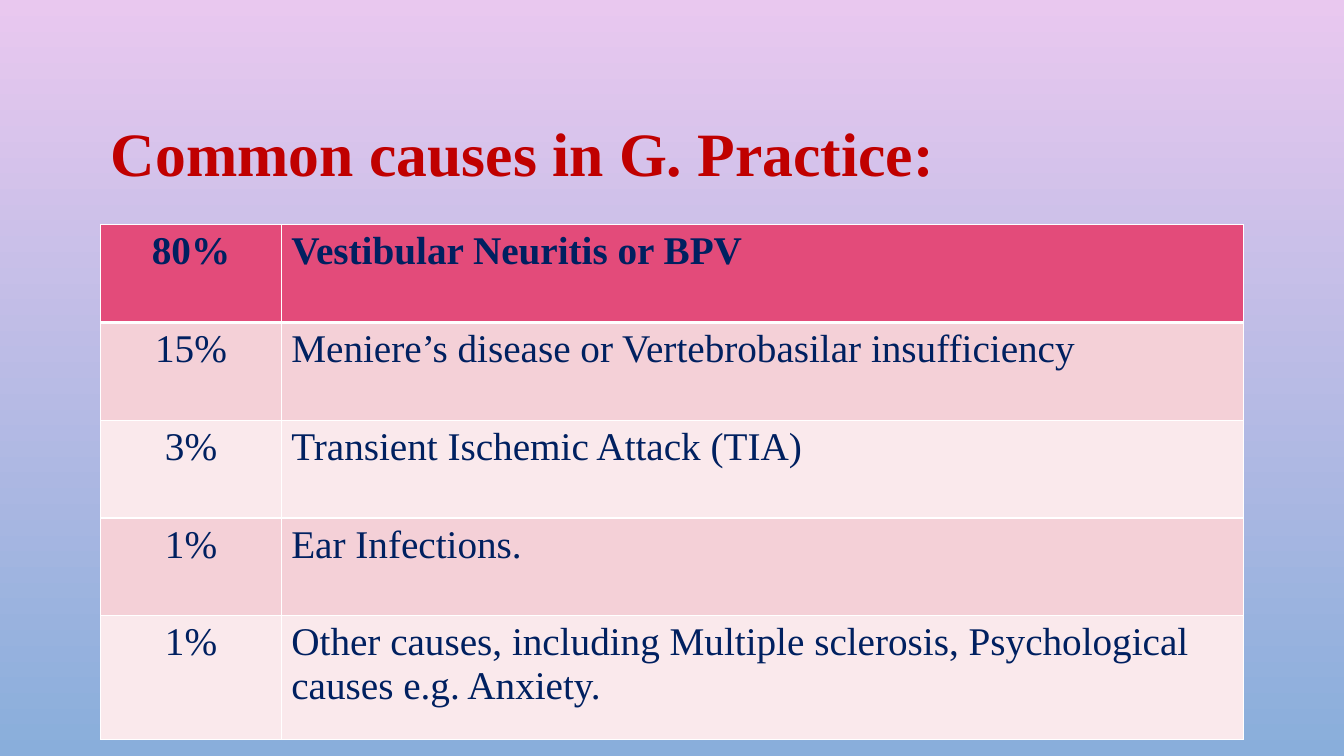
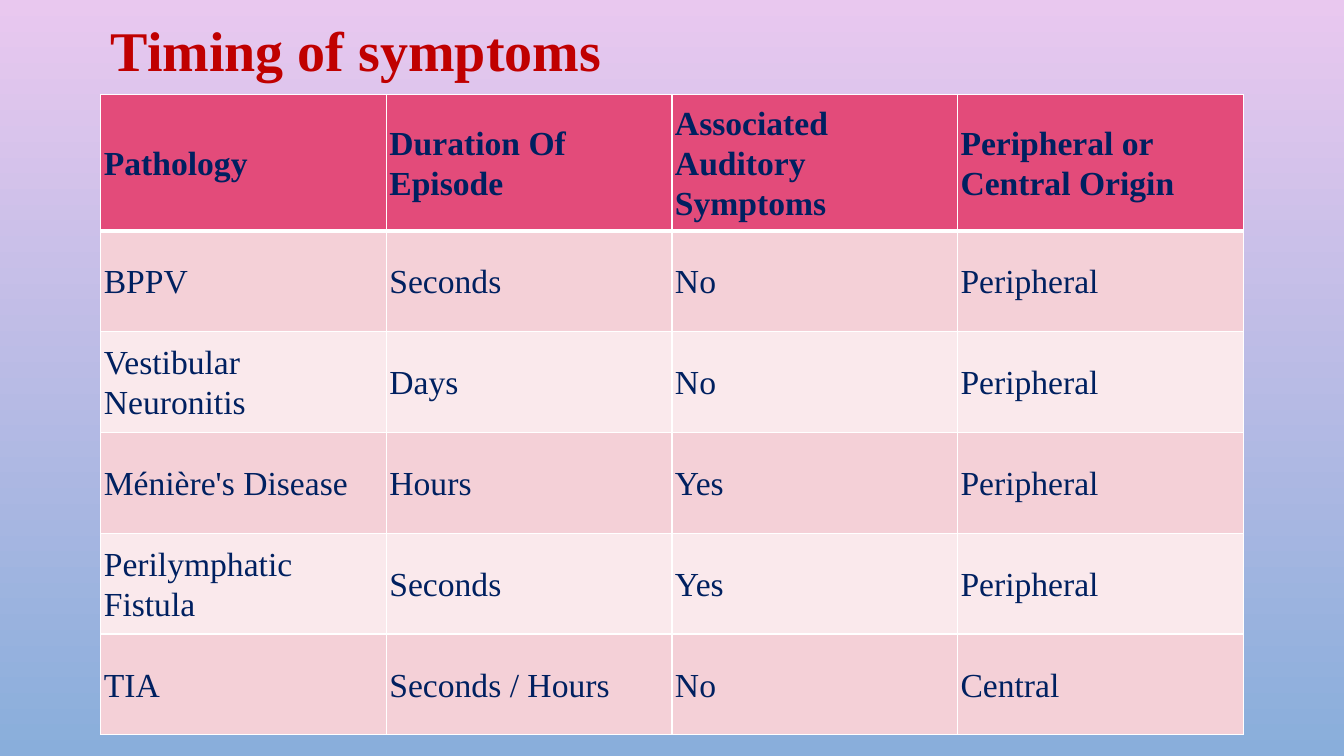
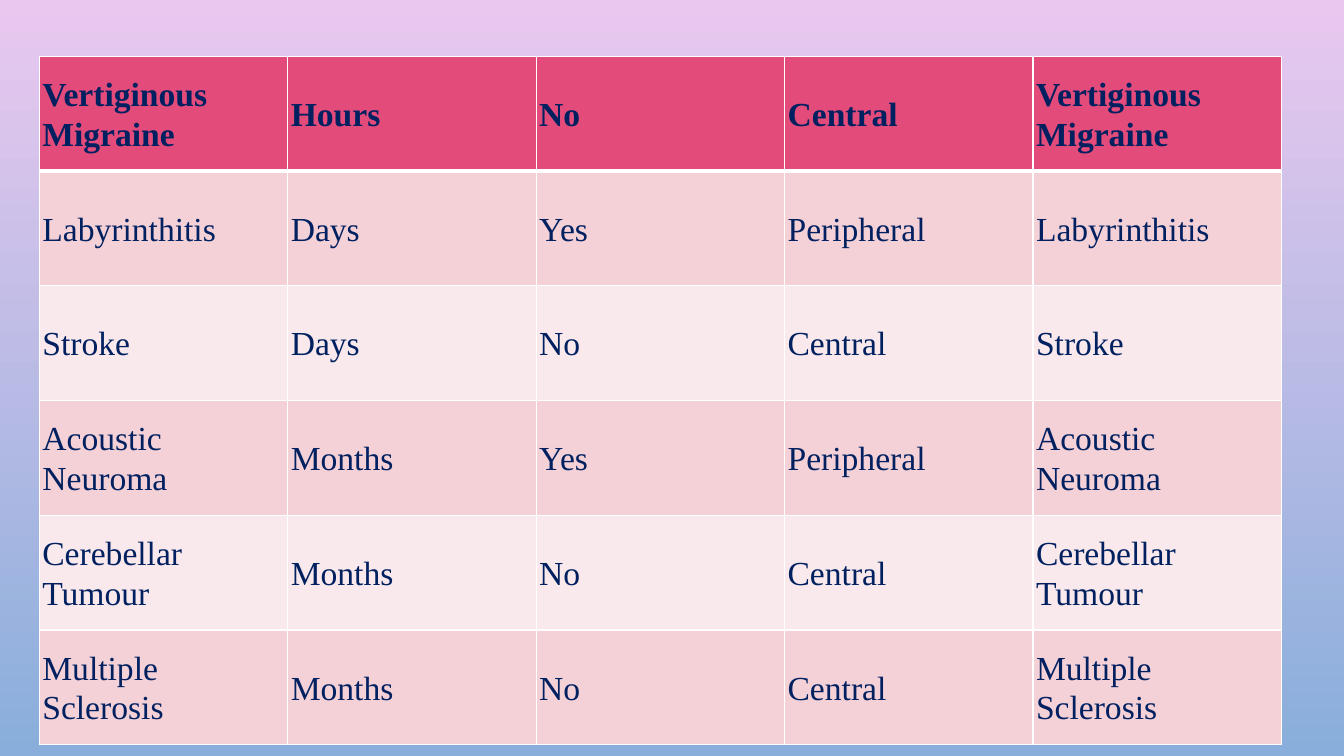
import pptx
import pptx.util
import pptx.dml.color
import pptx.enum.text
import pptx.oxml
import pptx.oxml.ns
from lxml import etree

Inches, Pt = pptx.util.Inches, pptx.util.Pt
ALIGN = pptx.enum.text.PP_ALIGN
ANCHOR = pptx.enum.text.MSO_ANCHOR

# Shared style
COLORS = {"sky_top": "E9C8EF", "sky_bottom": "89AEDB", "title": "C00000",
          "text": "002060", "header": "E34B7A", "odd": "F4D0D7",
          "even": "FAE9EC", "border": "FFFFFF"}
FONT = "Times New Roman"
TITLE_ONLY, BLANK = 5, 6
ROOMY = {"size": 28, "anchor": ANCHOR.TOP, "spacing": 1.0,
         "margins": (0.1, 0.05), "aligns": {0: ALIGN.CENTER}}
COMPACT = {"size": 24, "anchor": ANCHOR.MIDDLE, "spacing": 1.07,
           "margins": (0.03, 0.03), "aligns": {}}

# Content
CAUSES = [
    ("80%", "Vestibular Neuritis or BPV"),
    ("15%", "Meniere’s disease or Vertebrobasilar insufficiency"),
    ("3%", "Transient Ischemic Attack (TIA)"),
    ("1%", "Ear Infections."),
    ("1%", "Other causes, including Multiple sclerosis, Psychological causes e.g. Anxiety."),
]
TIMING = [
    ("Pathology", "Duration Of Episode", "Associated Auditory Symptoms",
     "Peripheral or Central Origin"),
    ("BPPV", "Seconds", "No", "Peripheral"),
    ("Vestibular Neuronitis", "Days", "No", "Peripheral"),
    ("Ménière's Disease", "Hours", "Yes", "Peripheral"),
    ("Perilymphatic Fistula", "Seconds", "Yes", "Peripheral"),
    ("TIA", "Seconds / Hours", "No", "Central"),
]
MORE_TIMING = [
    ("Vertiginous Migraine", "Hours", "No", "Central"),
    ("Labyrinthitis", "Days", "Yes", "Peripheral"),
    ("Stroke", "Days", "No", "Central"),
    ("Acoustic Neuroma", "Months", "Yes", "Peripheral"),
    ("Cerebellar Tumour", "Months", "No", "Central"),
    ("Multiple Sclerosis", "Months", "No", "Central"),
]
SLIDES = [
    {"title": ("Common causes in G. Practice:", 44, (1, 0.68, 11.33, 1.75)),
     "rows": CAUSES, "at": (1, 2.23), "widths": [1.79, 9.54],
     "heights": [0.97] * 4 + [1.23], "style": ROOMY},
    {"title": ("Timing of symptoms", 40, (1, 0.12, 11.33, 0.82)),
     "rows": TIMING, "at": (1, 0.94), "widths": [11.33 / 4] * 4,
     "heights": [1.35] + [1] * 5, "style": COMPACT},
    # The last column repeats the pathology
    {"title": None, "rows": [row + row[:1] for row in MORE_TIMING],
     "at": (0.39, 0.56), "widths": [12.32 / 5] * 5,
     "heights": [6.83 / 6] * 6, "style": COMPACT},
]


def rgb(name):
    return pptx.dml.color.RGBColor.from_string(COLORS[name])


def set_attrs(obj, values):
    for name, value in values.items():
        setattr(obj, name, value)


def format_font(font, size, color, bold):
    set_attrs(font, {"name": FONT, "size": Pt(size), "bold": bold})
    font.color.rgb = rgb(color)


def set_background(master):
    fill = master.background.fill
    fill.gradient()
    fill.gradient_angle = 270
    for stop, name in zip(fill.gradient_stops, ("sky_top", "sky_bottom")):
        stop.color.rgb = rgb(name)


def add_title(s, text, size, box):
    sp = s.shapes.title
    set_attrs(sp, dict(zip(("left", "top", "width", "height"), map(Inches, box))))
    tf = sp.text_frame
    set_attrs(tf, {"vertical_anchor": ANCHOR.MIDDLE, "word_wrap": True,
                   "auto_size": pptx.enum.text.MSO_AUTO_SIZE.NONE})
    p = tf.paragraphs[0]
    set_attrs(p, {"alignment": ALIGN.LEFT, "line_spacing": 0.9})
    r = p.add_run()
    r.text = text
    format_font(r.font, size, "title", True)


def set_borders(cell, widths):
    tcPr = cell._tc.get_or_add_tcPr()
    for i, (side, width) in enumerate(widths.items()):
        ln = etree.Element(pptx.oxml.ns.qn("a:ln" + side), w=str(Pt(width)))
        fill = etree.SubElement(ln, pptx.oxml.ns.qn("a:solidFill"))
        etree.SubElement(fill, pptx.oxml.ns.qn("a:srgbClr"), val=COLORS["border"])
        tcPr.insert(i, ln)


def fill_cell(cell, text, row, col, style):
    side, end = map(Inches, style["margins"])
    set_attrs(cell, {"vertical_anchor": style["anchor"],
                     "margin_left": side, "margin_right": side,
                     "margin_top": end, "margin_bottom": end})
    cell.fill.solid()
    cell.fill.fore_color.rgb = rgb("header" if row == 0 else "odd" if row % 2 else "even")
    # The rule under the header row is thicker
    set_borders(cell, {"L": 1, "R": 1, "T": 3 if row == 1 else 1,
                       "B": 3 if row == 0 else 1})
    p = cell.text_frame.paragraphs[0]
    set_attrs(p, {"alignment": style["aligns"].get(col, ALIGN.LEFT),
                  "line_spacing": style["spacing"]})
    r = p.add_run()
    r.text = text
    format_font(r.font, style["size"], "text", row == 0)


def add_table(s, rows, at, widths, heights, style):
    left, top = at
    box = map(Inches, (left, top, sum(widths), sum(heights)))
    table = s.shapes.add_table(len(rows), len(widths), *box).table
    table.horz_banding = False
    for column, width in zip(table.columns, widths):
        column.width = Inches(width)
    for line, height in zip(table.rows, heights):
        line.height = Inches(height)
    for i, row in enumerate(rows):
        for j, text in enumerate(row):
            fill_cell(table.cell(i, j), text, i, j, style)


def main():
    prs = pptx.Presentation()
    set_attrs(prs, {"slide_width": Inches(13.33), "slide_height": Inches(7.5)})
    set_background(prs.slide_master)
    for slide in SLIDES:
        title = slide["title"]
        s = prs.slides.add_slide(prs.slide_layouts[TITLE_ONLY if title else BLANK])
        if title:
            add_title(s, *title)
        add_table(s, **{key: slide[key] for key in
                        ("rows", "at", "widths", "heights", "style")})
    prs.save("out.pptx")


if __name__ == "__main__":
    main()
